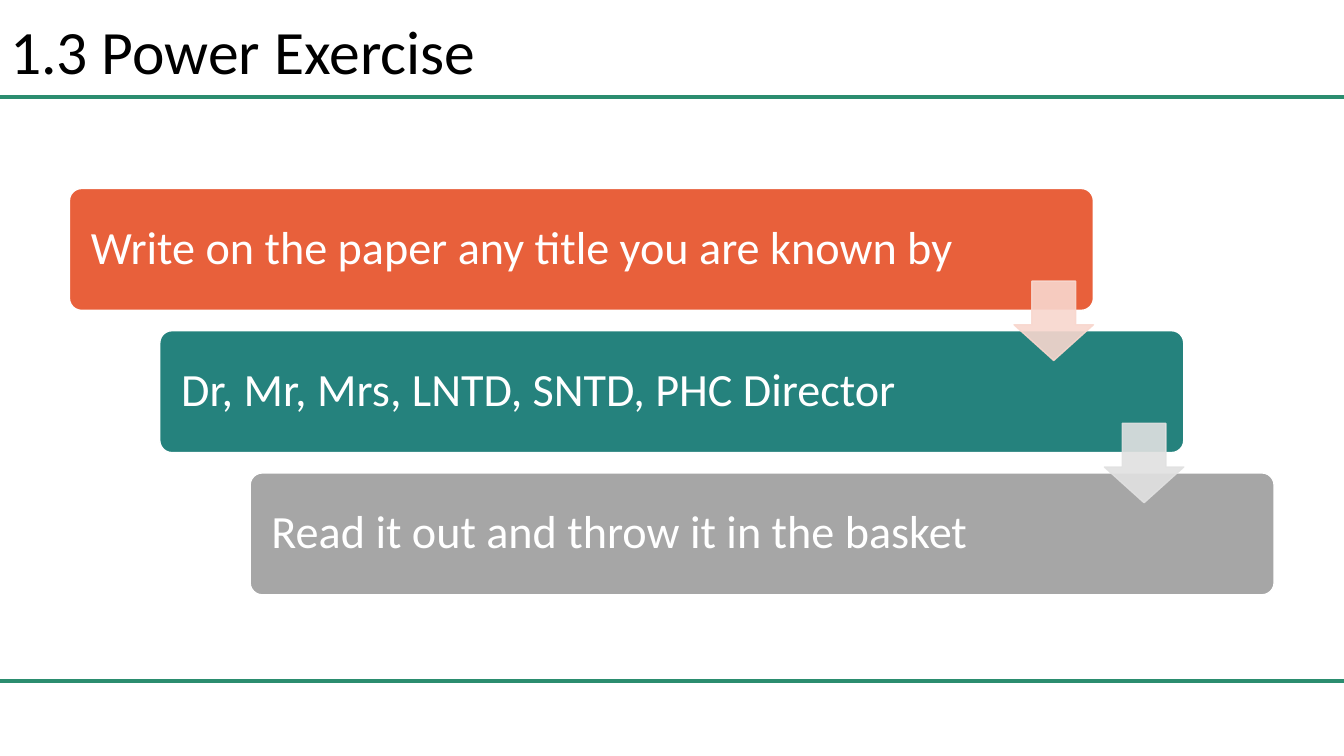
"""Build the Power Exercise slide: a title, two rules and a staircase of steps."""
import pptx
import pptx.chart.data
import pptx.dml.color
import pptx.enum.shapes
import pptx.enum.text
import pptx.oxml
import pptx.oxml.ns
import pptx.util

Cm = pptx.util.Cm
Pt = pptx.util.Pt
Shape = pptx.enum.shapes.MSO_SHAPE
WIDE, HIGH = 33.87, 19.05
STEPS = [
    ("Write on the paper any title you are known by", "E8603B"),
    ("Dr, Mr, Mrs, LNTD, SNTD, PHC Director", "25827D"),
    ("Read it out and throw it in the basket", "A6A6A6"),
]
ARROWS = ["F8D7CE", "E1E1E1"]


def color(code):
    """Turn a hex string into a colour."""
    return pptx.dml.color.RGBColor.from_string(code)


def fade(shape, share):
    """Make the fill and line of a shape partly transparent."""
    for node in shape._element.spPr.iter(pptx.oxml.ns.qn("a:srgbClr")):
        alpha = pptx.oxml.parse_xml(
            f'<a:alpha {pptx.oxml.ns.nsdecls("a")} val="{share * 1000}"/>')
        node.append(alpha)


def write(frame, text, size, code):
    """Fill a text frame with one left-aligned line, centred in height."""
    frame.text = text
    frame.word_wrap = True
    frame.auto_size = pptx.enum.text.MSO_AUTO_SIZE.NONE
    frame.vertical_anchor = pptx.enum.text.MSO_ANCHOR.MIDDLE
    para = frame.paragraphs[0]
    para.alignment = pptx.enum.text.PP_ALIGN.LEFT
    para.line_spacing = 0.9
    font = para.runs[0].font
    font.name, font.size = "Calibri", Pt(size)
    font.color.rgb = color(code)


def block(slide, kind, box, fill, line, ratios):
    """Add a filled preset shape with a thin outline."""
    shape = slide.shapes.add_shape(kind, *map(Cm, box))
    shape.shadow.inherit = False
    shape.fill.solid()
    shape.fill.fore_color.rgb = color(fill)
    shape.line.color.rgb = color(line)
    shape.line.width = Pt(1)
    for spot, ratio in enumerate(ratios):
        shape.adjustments[spot] = ratio
    return shape


def rule(slide, top):
    """Draw a green line across the slide."""
    line = slide.shapes.add_connector(
        pptx.enum.shapes.MSO_CONNECTOR.STRAIGHT, 0, Cm(top), Cm(WIDE), Cm(top))
    line.line.color.rgb = color("2B8D6F")
    line.line.width = Pt(3)
    props = line._element.spPr
    props.append(pptx.oxml.parse_xml(
        f'<a:effectLst {pptx.oxml.ns.nsdecls("a")}/>'))


def head(slide, left, top, width, height):
    """Place the slide title in its box."""
    title = slide.shapes.title
    title.left, title.top = Cm(left), Cm(top)
    title.width, title.height = Cm(width), Cm(height)
    write(title.text_frame, "1.3 Power Exercise", 44, "000000")


def stairs(slide, left, top, width, height):
    """Place the steps down a staircase with arrows between them."""
    wide, tall, side = width * 0.85, height * 0.3, 2
    last = len(STEPS) - 1
    right, down = (width - wide) / last, (height - tall) / last
    for spot, (text, fill) in enumerate(STEPS):
        box = (left + spot * right, top + spot * down, wide, tall)
        bar = block(slide, Shape.ROUNDED_RECTANGLE, box, fill, "FFFFFF", [0.1])
        bar.text_frame.margin_left = Cm(0.45)
        write(bar.text_frame, text, 33, "FFFFFF")
    for spot, fill in enumerate(ARROWS):
        box = (left + spot * right + wide - side,
               top + spot * down + tall * 0.76, side, side)
        arrow = block(slide, Shape.DOWN_ARROW, box, fill, fill, [0.55, 0.45])
        fade(arrow, 90)


def main():
    """Build and save the slide."""
    deck = pptx.Presentation()
    deck.slide_width, deck.slide_height = Cm(WIDE), Cm(HIGH)
    slide = deck.slides.add_slide(deck.slide_layouts[5])
    for top in (17.17, 2.44):
        rule(slide, top)
    head(slide, 0, 0.05, 29.21, 2.64)
    stairs(slide, 1.75, 4.75, 30.36, 10.24)
    deck.save("out.pptx")


if __name__ == "__main__":
    main()
